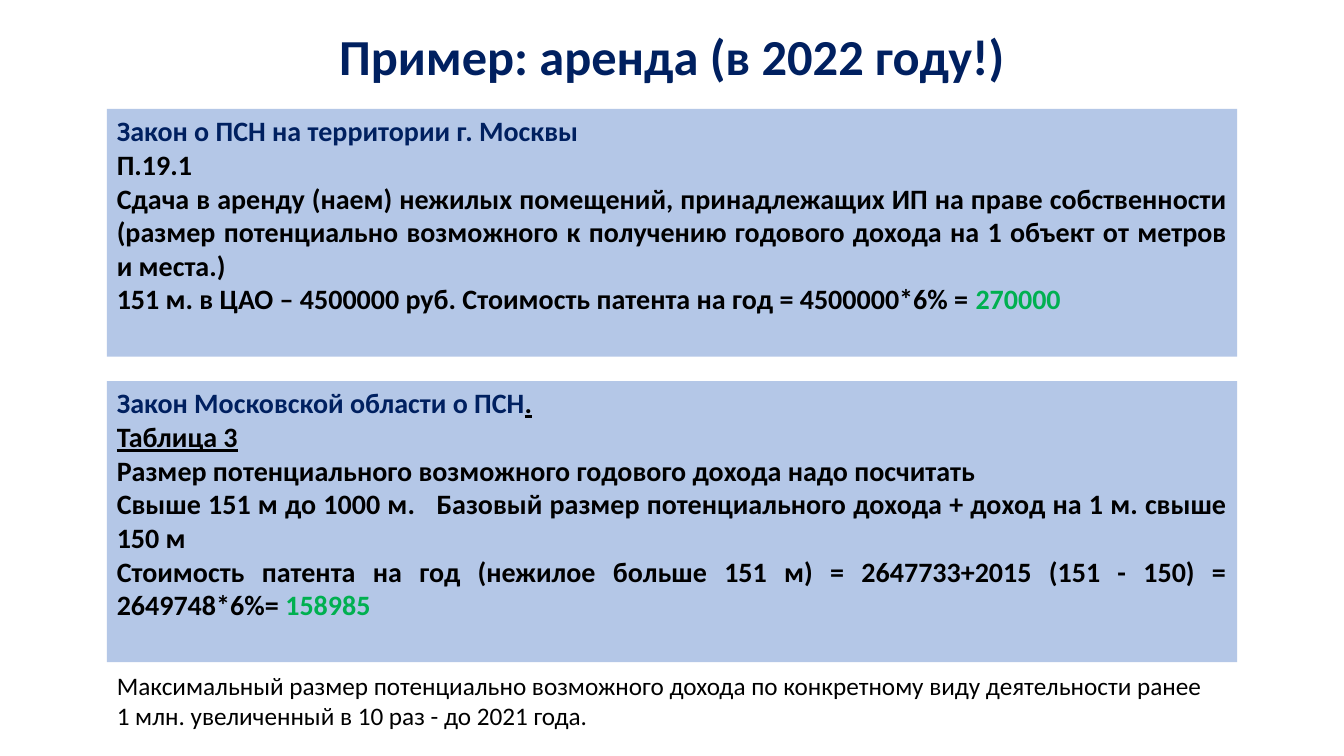
from pptx import Presentation
from pptx.dml.color import RGBColor
from pptx.enum import shapes, text
from pptx.util import Inches, Pt

COLORS = {"navy": "002060", "black": "000000", "green": "00B050", "panel": "B4C7E7"}
LEFT, WIDTH = 1.06, 11.21


def run(words, color="black", bold=True, line=False):
    return words, color, bold, line


class Deck:
    font = "Calibri"

    def __init__(self):
        self.prs = Presentation()
        self.prs.slide_width = Inches(13.33)
        self.prs.slide_height = Inches(7.5)
        self.slide = self.prs.slides.add_slide(self.prs.slide_layouts[6])

    def fill_text(self, shape, rows, size, align=text.PP_ALIGN.JUSTIFY):
        frame = shape.text_frame
        frame.word_wrap = True
        frame.vertical_anchor = text.MSO_ANCHOR.TOP
        for index, row in enumerate(rows):
            para = frame.add_paragraph() if index else frame.paragraphs[0]
            para.alignment = align
            for words, color, bold, line in row:
                part = para.add_run()
                part.text = words
                font = part.font
                font.name, font.size = self.font, Pt(size)
                font.bold, font.underline = bold, line
                font.color.rgb = RGBColor.from_string(COLORS[color])

    def label(self, box, rows, size, **style):
        shape = self.slide.shapes.add_textbox(*map(Inches, box))
        self.fill_text(shape, rows, size, **style)

    def panel(self, top, height, rows):
        box = map(Inches, (LEFT, top, WIDTH, height))
        shape = self.slide.shapes.add_shape(shapes.MSO_SHAPE.RECTANGLE, *box)
        shape.shadow.inherit = False
        shape.fill.solid()
        shape.fill.fore_color.rgb = RGBColor.from_string(COLORS["panel"])
        shape.line.fill.background()
        self.fill_text(shape, rows, 20)


def main():
    deck = Deck()
    deck.label((2.76, 0.2, 7.81, 0.71),
               [[run("Пример: аренда (в 2022 году!)", "navy")]],
               36, align=text.PP_ALIGN.CENTER)
    deck.panel(1.08, 2.46, [
        [run("Закон о ПСН на территории г. Москвы", "navy")],
        [run("П.19.1")],
        [run("Сдача в аренду (наем) нежилых помещений, принадлежащих ИП "
             "на праве собственности (размер потенциально возможного к "
             "получению годового дохода на 1 объект от метров и места.)")],
        [run("151 м. в ЦАО – 4500000 руб. Стоимость патента на год = 4500000*6% = "),
         run("270000", "green")],
    ])
    deck.panel(3.78, 2.79, [
        [run("Закон Московской области о ПСН", "navy"), run(".", line=True)],
        [run("Таблица 3", line=True)],
        [run("Размер потенциального возможного годового дохода надо посчитать")],
        [run("Свыше 151 м до 1000 м.   Базовый размер потенциального дохода "
             "+ доход на 1 м. свыше 150 м")],
        [run("Стоимость патента на год (нежилое больше 151 м) = "
             "2647733+2015 (151 - 150) = 2649748*6%="),
         run(" 158985", "green")],
    ])
    deck.label((LEFT, 6.6, WIDTH, 0.71), [
        [run("Максимальный размер потенциально возможного дохода по "
             "конкретному виду деятельности ранее ", bold=False)],
        [run("1 млн. увеличенный в 10 раз - до 2021 года.", bold=False)],
    ], 18)
    deck.prs.save("out.pptx")


if __name__ == "__main__":
    main()
